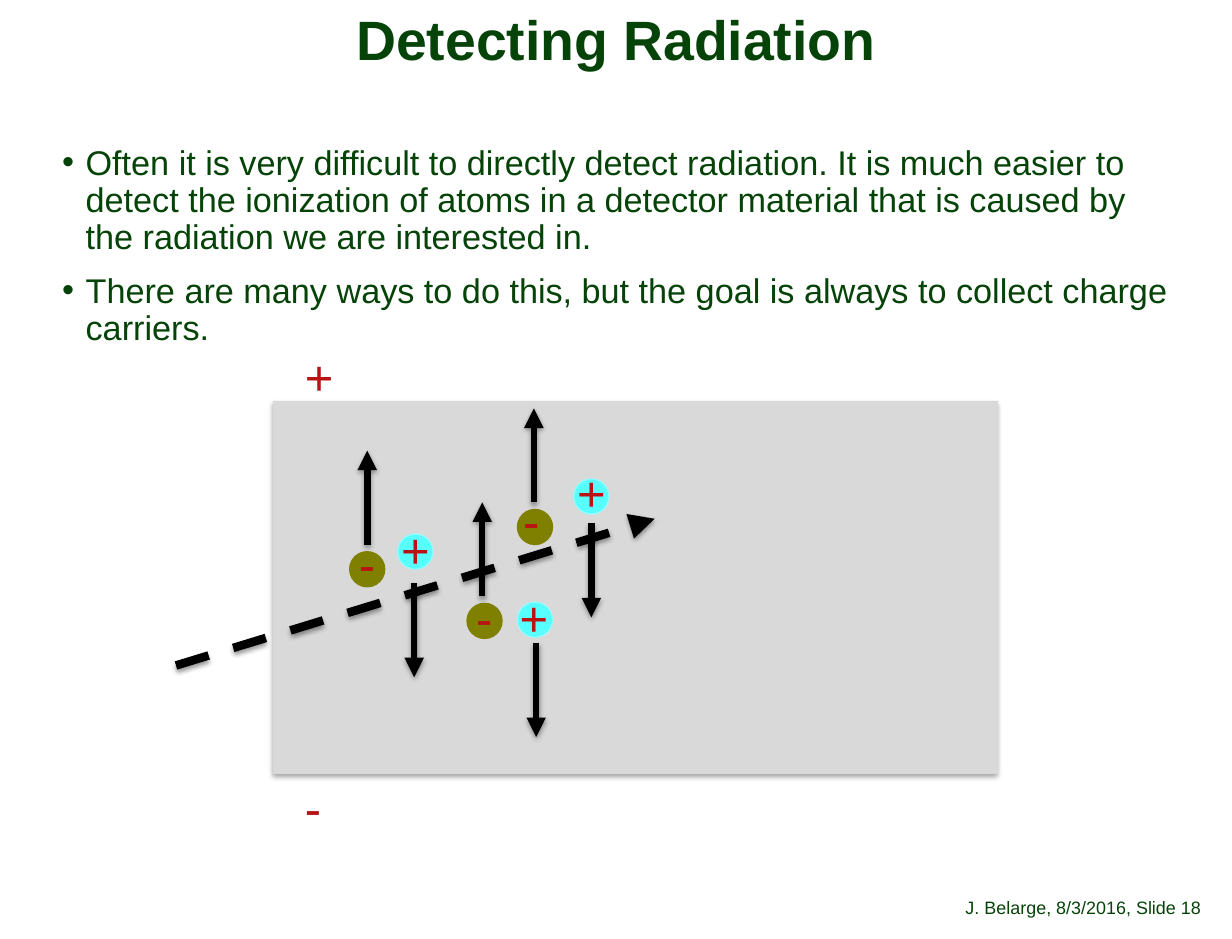
from dataclasses import dataclass

from lxml.etree import SubElement
from pptx import Presentation
from pptx.dml.color import RGBColor as RGB
from pptx.enum.dml import MSO_LINE
from pptx.enum.shapes import MSO_CONNECTOR as CONNECTOR, MSO_SHAPE as SHAPE
from pptx.enum.text import MSO_AUTO_SIZE as FIT, PP_ALIGN as ALIGN
from pptx.oxml.ns import qn
from pptx.util import Inches, Pt


@dataclass(frozen=True)
class Theme:
    font: str = "Arial"
    text: RGB = RGB(0x06, 0x43, 0x08)
    sign: RGB = RGB(0xB8, 0x14, 0x14)
    detector: RGB = RGB(0xD9, 0xD9, 0xD9)
    electron: RGB = RGB(0x7F, 0x80, 0x00)
    ion: RGB = RGB(0x58, 0xFF, 0xFF)
    ion_edge: RGB = RGB(0x8F, 0xFF, 0xFF)
    arrow: RGB = RGB(0, 0, 0)
    title_size: float = 34
    body_size: float = 21
    sign_size: float = 30
    footer_size: float = 11
    outline: float = 0.75
    drift_width: float = 4
    track_width: float = 5.25


class Board:
    def __init__(self, slide, theme):
        self.shapes = slide.shapes
        self.theme = theme

    def text(self, box, lines, size, align=ALIGN.LEFT, spacing=1.0,
             inset=(0, 0), bold=False, color=None, wrap=True, bullet=False):
        frame = self.shapes.add_textbox(*map(Inches, box)).text_frame
        frame.word_wrap = wrap
        frame.auto_size = FIT.NONE if wrap else FIT.SHAPE_TO_FIT_TEXT
        frame.margin_left = frame.margin_right = Inches(inset[0])
        frame.margin_top = frame.margin_bottom = Inches(inset[1])
        frame.text = "\n".join(lines)
        for index, paragraph in enumerate(frame.paragraphs):
            if bullet:
                self.bullet(paragraph)
            paragraph.alignment = align
            paragraph.line_spacing = spacing
            if index:
                paragraph.space_before = Pt(size / 2)
            for run in paragraph.runs:
                run.font.name = self.theme.font
                run.font.size = Pt(size)
                run.font.bold = bold
                run.font.color.rgb = color or self.theme.text

    def bullet(self, paragraph):
        properties = paragraph._p.get_or_add_pPr()
        properties.set("marL", str(Inches(0.2)))
        properties.set("indent", str(Inches(-0.2)))
        SubElement(properties, qn("a:buFont"), typeface=self.theme.font)
        SubElement(properties, qn("a:buChar"), char="•")

    def sign(self, symbol, left, top):
        width = 0.45 if symbol == "+" else 0.34
        self.text((left, top, width, 0.61), [symbol], self.theme.sign_size,
                  inset=(0.1, 0.05), color=self.theme.sign, wrap=False)

    def shape(self, kind, box, fill, edge):
        shape = self.shapes.add_shape(kind, *map(Inches, box))
        shape.fill.solid()
        shape.fill.fore_color.rgb = fill
        shape.line.color.rgb = edge
        shape.line.width = Pt(self.theme.outline)
        shape.shadow.inherit = False
        return shape

    def detector(self, box):
        slab = self.shape(SHAPE.RECTANGLE, box, self.theme.detector, self.theme.detector)
        self.shadow(slab._element.spPr.find(qn("a:effectLst")), 1.8, 35)

    def carrier(self, left, top, fill, edge):
        self.shape(SHAPE.OVAL, (left, top, 0.3, 0.3), fill, edge)

    def arrow(self, start, end, width, dash=None):
        arrow = self.shapes.add_connector(CONNECTOR.STRAIGHT, *map(Inches, (*start, *end)))
        arrow.line.color.rgb = self.theme.arrow
        arrow.line.width = Pt(width)
        if dash:
            arrow.line.dash_style = dash
        SubElement(arrow.line._get_or_add_ln(), qn("a:tailEnd"), type="triangle")
        self.shadow(SubElement(arrow._element.spPr, qn("a:effectLst")), 1.6, 38)

    def shadow(self, effects, distance, opacity):
        outer = SubElement(effects, qn("a:outerShdw"), blurRad=str(Pt(3.1)),
                           dist=str(Pt(distance)), dir="5400000", rotWithShape="0")
        tint = SubElement(outer, qn("a:srgbClr"), val=str(self.theme.arrow))
        SubElement(tint, qn("a:alpha"), val=str(opacity * 1000))


def main():
    deck = Presentation()
    deck.slide_width, deck.slide_height = Inches(10.5), Inches(8)
    theme = Theme()
    board = Board(deck.slides.add_slide(deck.slide_layouts[6]), theme)

    board.text((7.35, 7.66, 2.89, 0.17), ["J. Belarge, 8/3/2016, Slide 18"],
               theme.footer_size, ALIGN.RIGHT, 0.9)
    board.text((0.5, 0.09, 9.5, 0.56), ["Detecting Radiation"],
               theme.title_size, ALIGN.CENTER, 0.88, (0.06, 0.03), bold=True)
    board.text((0.53, 1.24, 9.45, 5.86), [
        "Often it is very difficult to directly detect radiation. It is much easier to "
        "detect the ionization of atoms in a detector material that is caused by "
        "the radiation we are interested in.",
        "There are many ways to do this, but the goal is always to collect charge carriers.",
    ], theme.body_size, spacing=0.9, bullet=True)

    board.detector((2.33, 3.42, 6.17, 3.17))
    board.arrow((1.5, 5.67), (5.58, 4.42), theme.track_width, MSO_LINE.DASH)
    board.sign("+", 2.5, 2.9)
    board.sign("-", 2.5, 6.58)

    electrons = [(2.98, 4.7), (4.41, 4.34), (3.98, 5.14)]
    ions = [(4.41, 5.13), (3.39, 4.55), (4.89, 4.08)]
    for left, top in electrons:
        board.carrier(left, top, theme.electron, theme.electron)
    for left, top in ions:
        board.carrier(left, top, theme.ion, theme.ion_edge)

    drift = 0.8
    electron_starts = [(3.13, 4.64), (4.55, 4.28), (4.11, 5.08)]
    ion_starts = [(3.53, 4.97), (4.57, 5.48), (5.04, 4.46)]
    for starts, step in ((electron_starts, -drift), (ion_starts, drift)):
        for x, y in starts:
            board.arrow((x, y), (x, y + step), theme.drift_width)

    ion_signs = [(3.32, 4.38), (4.82, 3.89), (4.33, 4.96)]
    electron_signs = [(2.96, 4.5), (3.96, 4.96), (4.36, 4.13)]
    for symbol, places in (("+", ion_signs), ("-", electron_signs)):
        for left, top in places:
            board.sign(symbol, left, top)

    deck.save("out.pptx")


if __name__ == "__main__":
    main()
